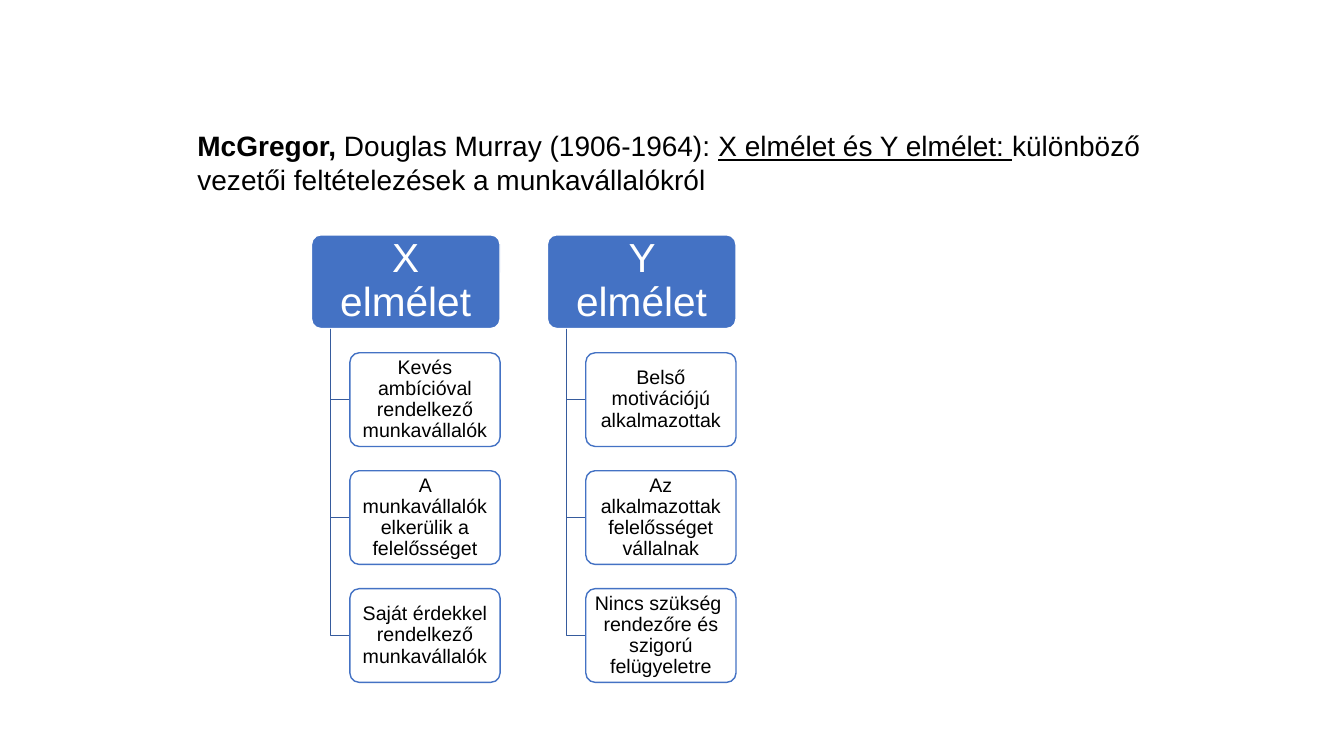
from dataclasses import dataclass

from pptx import Presentation
from pptx.dml.color import RGBColor
from pptx.enum.shapes import MSO_SHAPE as Form
from pptx.enum.text import MSO_ANCHOR as Anchor, PP_ALIGN as Align
from pptx.util import Inches, Pt

BLUE, DARK, WHITE, BLACK = "4472C4", "365B9D", "FFFFFF", "000000"
TOP, STEP, HIGH = 2.33, 1.17, 0.93
STEM, INDENT = 0.19, 0.38


@dataclass
class Style:
    width: float
    fill: str
    line: str
    ink: str
    size: int
    side: float
    edge: float


@dataclass
class Theory:
    left: float
    name: str
    points: list[str]


@dataclass
class Part:
    text: str
    bold: bool = False
    under: bool = False


HEAD = Style(1.87, BLUE, WHITE, WHITE, 29, 0.08, 0.06)
ITEM = Style(1.49, WHITE, BLUE, BLACK, 14, 0.06, 0.05)

TITLE = [
    Part("McGregor, ", bold=True),
    Part("Douglas Murray (1906-1964): "),
    Part("X elmélet és Y elmélet: ", under=True),
    Part("különböző vezetői feltételezések a munkavállalókról"),
]

THEORIES = [
    Theory(3.09, "X elmélet", [
        "Kevés ambícióval rendelkező munkavállalók",
        "A munkavállalók elkerülik a felelősséget",
        "Saját érdekkel rendelkező munkavállalók",
    ]),
    Theory(5.43, "Y elmélet", [
        "Belső motivációjú alkalmazottak",
        "Az alkalmazottak felelősséget vállalnak",
        "Nincs szükség  rendezőre és szigorú felügyeletre",
    ]),
]


def color(code: str) -> RGBColor:
    return RGBColor.from_string(code)


def set_font(run, size: int, ink: str) -> None:
    run.font.name = "Arial"
    run.font.size = Pt(size)
    run.font.color.rgb = color(ink)


def draw_title(slide, parts: list[Part]) -> None:
    box = slide.shapes.add_textbox(Inches(1.86), Inches(1.23), Inches(9.8), Inches(0.77))
    box.text_frame.word_wrap = True
    for part in parts:
        run = box.text_frame.paragraphs[0].add_run()
        run.text = part.text
        set_font(run, 20, BLACK)
        run.font.bold = part.bold
        run.font.underline = part.under


def draw_box(slide, left: float, top: float, text: str, style: Style) -> None:
    box = slide.shapes.add_shape(
        Form.ROUNDED_RECTANGLE, Inches(left), Inches(top), Inches(style.width), Inches(HIGH))
    box.adjustments[0] = 0.1
    box.shadow.inherit = False
    box.fill.solid()
    box.fill.fore_color.rgb = color(style.fill)
    box.line.color.rgb = color(style.line)
    box.line.width = Pt(1)
    frame = box.text_frame
    frame.text = text
    frame.word_wrap = True
    frame.vertical_anchor = Anchor.MIDDLE
    frame.margin_left = frame.margin_right = Inches(style.side)
    frame.margin_top = frame.margin_bottom = Inches(style.edge)
    para = frame.paragraphs[0]
    para.alignment = Align.CENTER
    para.line_spacing = 0.9
    set_font(para.runs[0], style.size, style.ink)


def draw_elbow(slide, left: float, right: float, top: float, low: float) -> None:
    pen = slide.shapes.build_freeform(Inches(left), Inches(top))
    pen.add_line_segments(
        [(Inches(left), Inches(low)), (Inches(right), Inches(low))], close=False)
    elbow = pen.convert_to_shape()
    elbow.shadow.inherit = False
    elbow.fill.background()
    elbow.line.color.rgb = color(DARK)
    elbow.line.width = Pt(1)


def draw_theory(slide, theory: Theory) -> None:
    draw_box(slide, theory.left, TOP, theory.name, HEAD)
    left = theory.left + INDENT
    for row, point in enumerate(theory.points, 1):
        top = TOP + row * STEP
        draw_elbow(slide, theory.left + STEM, left, TOP + HIGH, top + HIGH / 2)
        draw_box(slide, left, top, point, ITEM)


def main() -> None:
    deck = Presentation()
    deck.slide_width = Inches(13.33)
    deck.slide_height = Inches(7.5)
    slide = deck.slides.add_slide(deck.slide_layouts[6])
    draw_title(slide, TITLE)
    for theory in THEORIES:
        draw_theory(slide, theory)
    deck.save("out.pptx")


if __name__ == "__main__":
    main()
